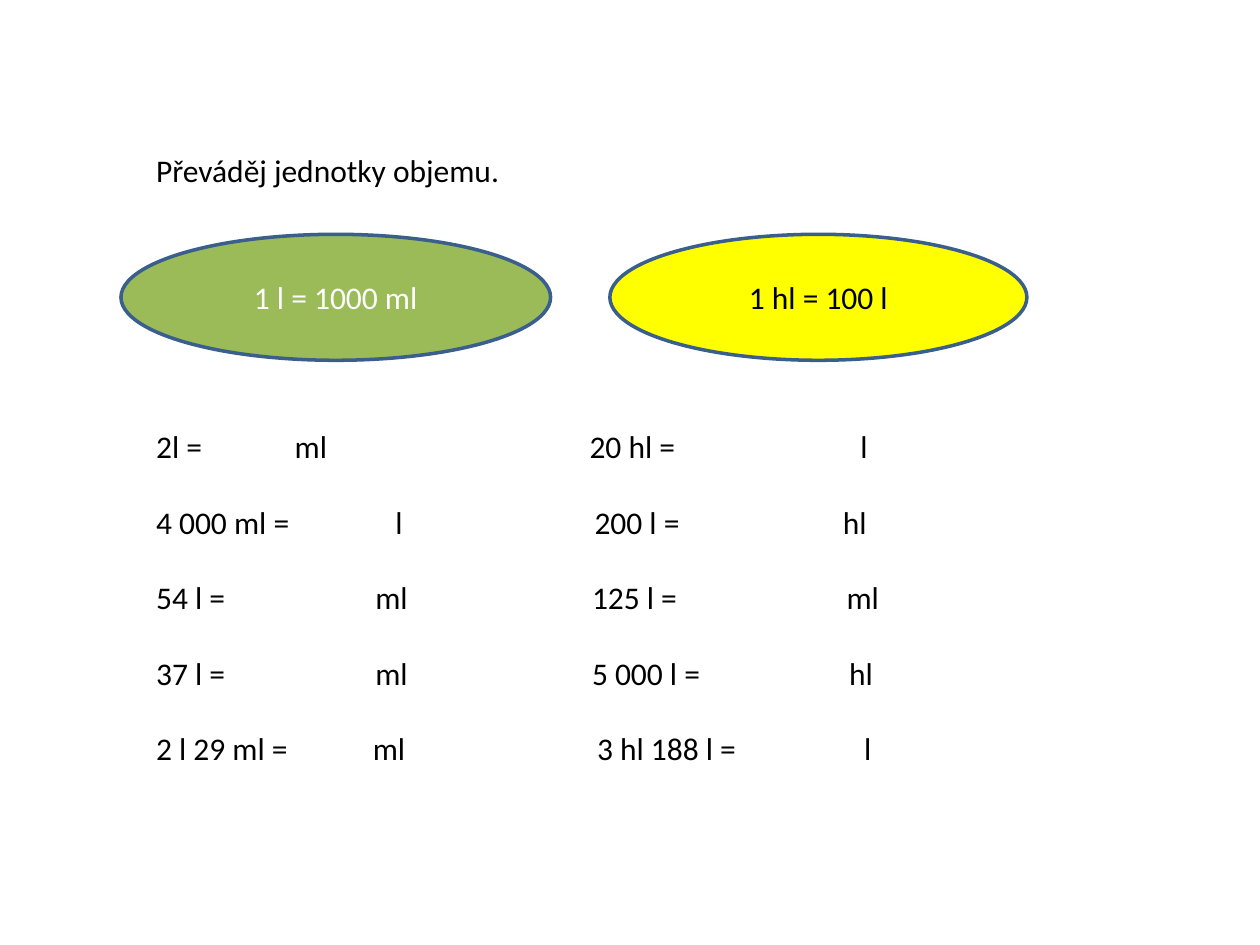
from lxml import etree
from pptx import Presentation
from pptx.dml.color import RGBColor
from pptx.enum.shapes import MSO_SHAPE
from pptx.enum.text import MSO_ANCHOR, PP_ALIGN
from pptx.oxml.ns import qn
from pptx.util import Inches, Pt

ELLIPSE = MSO_SHAPE.OVAL
MIDDLE = MSO_ANCHOR.MIDDLE
CENTER = PP_ALIGN.CENTER
WIDTH, HEIGHT = 10, 7.5
BLACK, WHITE = "000000", "FFFFFF"
GREEN, YELLOW, OUTLINE = "9BBB59", "FFFF00", "3A5F8C"

RULES = [
    ("1 l = 1000 ml", 0, 3.41, GREEN, WHITE),
    ("1 hl = 100 l", 3.88, 3.31, YELLOW, BLACK),
]
EXERCISES = [
    (("2l =", "ml", "20 hl =", "l"), (1.1, 3.44, 5.59)),
    (("4 000 ml =", "l", "200 l =", "hl"), (1.9, 3.48, 5.45)),
    (("54 l =", "ml", "125 l =", "ml"), (1.74, 3.46, 5.48)),
    (("37 l =", "ml", "5 000 l =", "hl"), (1.74, 3.46, 5.5)),
    (("2 l 29 ml =", "ml", "3 hl 188 l =", "l"), (1.72, 3.5, 5.62)),
]


def rgb(value):
    return RGBColor.from_string(value)


def style(paragraph, color):
    paragraph.font.name = "Calibri"
    paragraph.font.size = Pt(18)
    paragraph.font.color.rgb = rgb(color)


def set_tabs(paragraph, stops):
    tabs = etree.SubElement(paragraph._p.get_or_add_pPr(), qn("a:tabLst"))
    for stop in stops:
        etree.SubElement(tabs, qn("a:tab"), pos=str(Inches(stop)), algn="l")


def add_frame(slide, box):
    frame = slide.shapes.add_textbox(*map(Inches, box)).text_frame
    frame.word_wrap = True
    return frame


def add_instruction(slide, box):
    instruction = add_frame(slide, box).paragraphs[0]
    instruction.text = "Převáděj jednotky objemu."
    style(instruction, BLACK)


def add_rules(slide, box):
    left, top, _, height = box
    for wording, offset, width, fill, color in RULES:
        rule = slide.shapes.add_shape(
            ELLIPSE, *map(Inches, (left + offset, top, width, height)))
        rule.shadow.inherit = False
        rule.fill.solid()
        rule.fill.fore_color.rgb = rgb(fill)
        rule.line.color.rgb = rgb(OUTLINE)
        rule.line.width = Pt(2)
        rule.text_frame.vertical_anchor = MIDDLE
        equation = rule.text_frame.paragraphs[0]
        equation.text = wording
        equation.alignment = CENTER
        style(equation, color)


def add_exercises(slide, box):
    frame = add_frame(slide, box)
    for index, (parts, stops) in enumerate(EXERCISES):
        exercise = frame.add_paragraph() if index else frame.paragraphs[0]
        exercise.text = "\t".join(parts)
        exercise.space_after = Pt(21.6)
        set_tabs(exercise, stops)
        style(exercise, BLACK)


def main():
    deck = Presentation()
    deck.slide_width, deck.slide_height = Inches(WIDTH), Inches(HEIGHT)
    slide = deck.slides.add_slide(deck.slide_layouts[6])
    add_instruction(slide, (1.14, 1.15, 2.95, 0.71))
    add_rules(slide, (0.96, 1.86, 7.19, 1))
    add_exercises(slide, (1.14, 3.34, 6.15, 2.83))
    deck.save("out.pptx")


if __name__ == "__main__":
    main()
